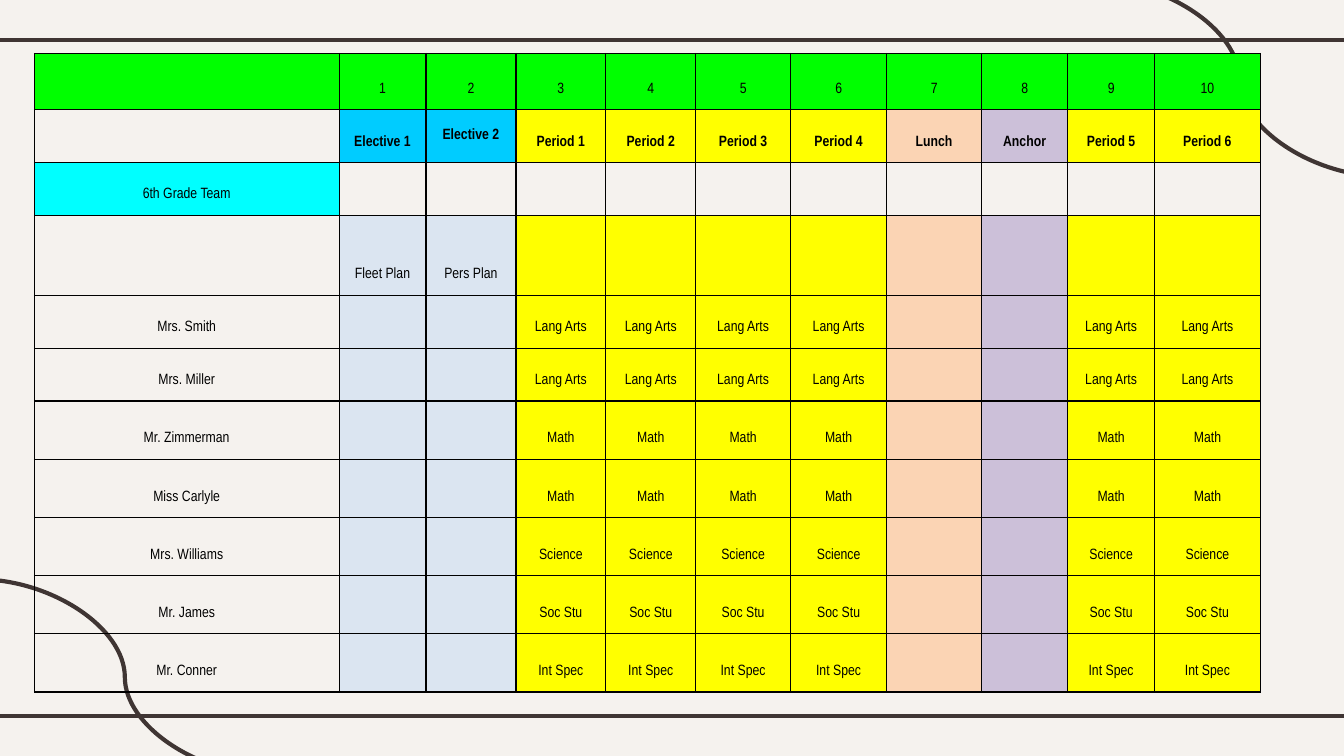
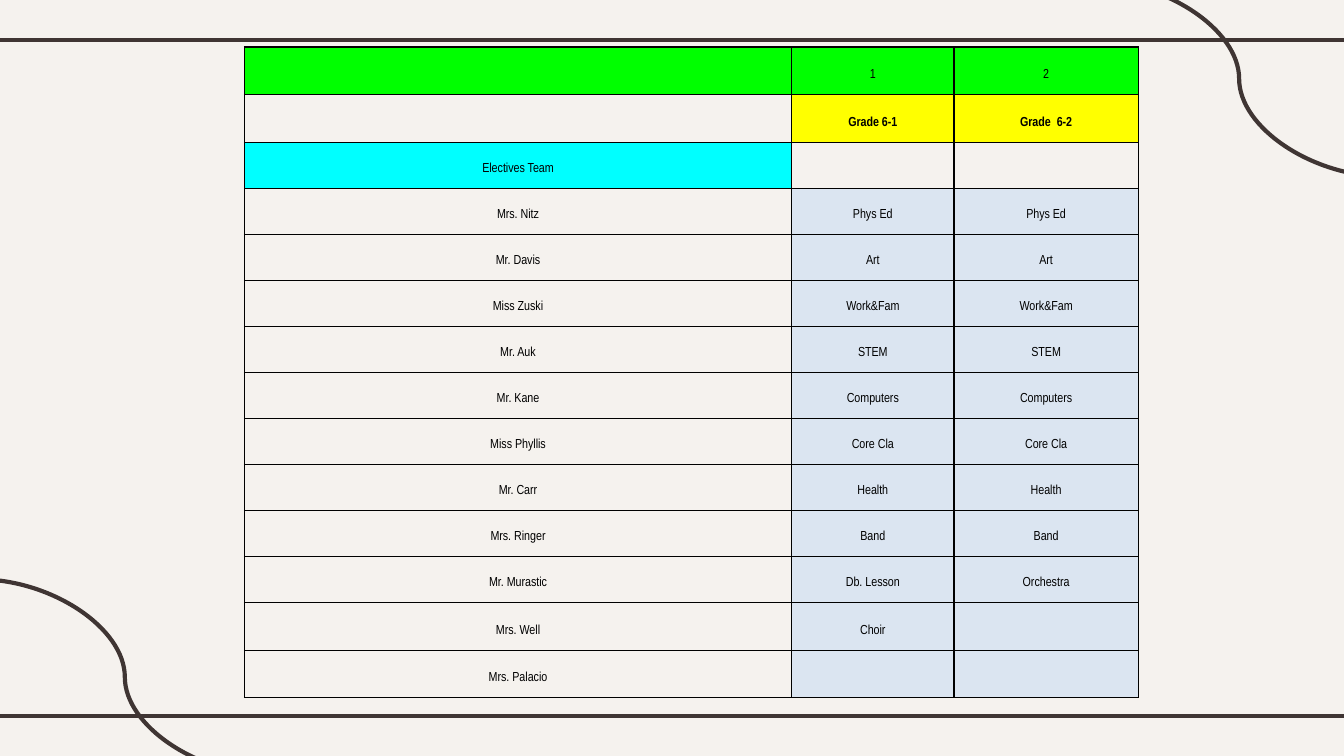
import lxml.etree
import pptx
import pptx.dml.color
import pptx.enum.shapes
import pptx.enum.text
import pptx.oxml.ns
import pptx.util

Cm = pptx.util.Cm
Pt = pptx.util.Pt
ANCHOR = pptx.enum.text.MSO_ANCHOR
CONNECTOR = pptx.enum.shapes.MSO_CONNECTOR

PAPER, INK, BLACK = "F5F2EE", "3F3533", "000000"
GREEN, AQUA, BLUE, YELLOW = "00FF00", "00FFFF", "00CCFF", "FFFF00"
PALE_BLUE, PEACH, LILAC = "DBE5F1", "FBD4B4", "CCC0D9"
FONT = "Arial Narrow"

FRAME = [
    (CONNECTOR.STRAIGHT, -0.2, 13.54, 25.6, 13.54),
    (CONNECTOR.STRAIGHT, -0.2, 0.76, 25.6, 0.76),
    (CONNECTOR.CURVE, 20.65, -0.36, 26.19, 3.34),
    (CONNECTOR.CURVE, -0.41, 10.95, 5.13, 14.65),
]

GRADE_TEAM = [
    ("Mrs. Smith", "Lang Arts"),
    ("Mrs. Miller", "Lang Arts"),
    ("Mr. Zimmerman", "Math"),
    ("Miss Carlyle", "Math"),
    ("Mrs. Williams", "Science"),
    ("Mr. James", "Soc Stu"),
    ("Mr. Conner", "Int Spec"),
]
ELECTIVES_TEAM = [
    ("Mrs. Nitz", "Phys Ed", "Phys Ed"),
    ("Mr. Davis", "Art", "Art"),
    ("Miss Zuski", "Work&Fam", "Work&Fam"),
    ("Mr. Auk", "STEM", "STEM"),
    ("Mr. Kane", "Computers", "Computers"),
    ("Miss Phyllis", "Core Cla", "Core Cla"),
    ("Mr. Carr", "Health", "Health"),
    ("Mrs. Ringer", "Band", "Band"),
    ("Mr. Murastic", "Db. Lesson", "Orchestra"),
    ("Mrs. Well", "Choir", ""),
    ("Mrs. Palacio", "", ""),
]

SCHEDULES = [
    {
        "left": 0.65, "top": 1.01, "size": 8,
        "widths": [5.76, 1.64, 1.7, 1.7, 1.7, 1.79, 1.82, 1.79, 1.63, 1.64, 2],
        "heights": [1.06, 1, 1, 1.51, 1, 1] + [1.1] * 5,
        "periods": ["Elective 1", "Elective 2", "Period 1", "Period 2", "Period 3",
                    "Period 4", "Lunch", "Anchor", "Period 5", "Period 6"],
        "period_fills": [BLUE] * 2 + [YELLOW] * 4 + [PEACH, LILAC] + [YELLOW] * 2,
        "body_fills": [PALE_BLUE] * 2 + [YELLOW] * 4 + [PEACH, LILAC] + [YELLOW] * 2,
        "team": "6th Grade Team",
        "body": [["", "Fleet Plan", "Pers Plan"] + [""] * 8]
        + [[teacher, "", ""] + [subject] * 4 + ["", ""] + [subject] * 2
           for teacher, subject in GRADE_TEAM],
        "centred": "Elective 2",
    },
    {
        "left": 4.62, "top": 0.89, "size": 7,
        "widths": [10.34, 3.07, 3.48],
        "heights": [0.9] * 2 + [0.87] * 10 + [0.9] * 2,
        "periods": ["Grade 6-1", "Grade  6-2"],
        "period_fills": [YELLOW] * 2,
        "body_fills": [PALE_BLUE] * 2,
        "team": "Electives Team",
        "body": ELECTIVES_TEAM,
        "centred": None,
    },
]

CELL_FORMAT = {
    "margin_left": Cm(0.08), "margin_right": Cm(0.08),
    "margin_top": Cm(0.25), "margin_bottom": Cm(0.25),
    "vertical_anchor": ANCHOR.BOTTOM,
}
LINE_SPACING = 1.15


def rgb(colour):
    return pptx.dml.color.RGBColor.from_string(colour)


def add_child(parent, tag, **attributes):
    return lxml.etree.SubElement(parent, pptx.oxml.ns.qn(tag), **attributes)


def apply(target, values):
    for name, value in values.items():
        setattr(target, name, value)


def add_frame(slide):
    for kind, *ends in FRAME:
        stroke = slide.shapes.add_connector(kind, *map(Cm, ends))
        stroke.line.color.rgb = rgb(INK)
        stroke.line.width = Pt(2.25)
        add_child(stroke._element.spPr, "a:effectLst")


def add_borders(cell):
    properties = cell._tc.get_or_add_tcPr()
    for side in ("a:lnL", "a:lnR", "a:lnT", "a:lnB"):
        border = add_child(properties, side, w=str(Pt(0.75)))
        add_child(add_child(border, "a:solidFill"), "a:srgbClr", val=BLACK)


def fill_cell(cell, text, fill, size, bold, centred):
    apply(cell, CELL_FORMAT)
    add_borders(cell)
    if fill:
        cell.fill.solid()
        cell.fill.fore_color.rgb = rgb(fill)
    else:
        cell.fill.background()
    paragraph = cell.text_frame.paragraphs[0]
    paragraph.alignment = pptx.enum.text.PP_ALIGN.CENTER
    if centred:
        cell.vertical_anchor = ANCHOR.MIDDLE
    else:
        paragraph.line_spacing = LINE_SPACING
    if text:
        run = paragraph.add_run()
        run.text = text
        apply(run.font, {"name": FONT, "size": Pt(size), "bold": bold})
        run.font.color.rgb = rgb(BLACK)
    else:
        add_child(paragraph._p, "a:endParaRPr", sz=str(size * 100))


def add_schedule(slide, schedule):
    periods, body = schedule["periods"], schedule["body"]
    count = len(periods)
    numbers = [str(number + 1) for number in range(count)]
    rows = [
        ([""] + numbers, [GREEN] * (count + 1)),
        ([""] + periods, [None] + schedule["period_fills"]),
        ([schedule["team"]] + [""] * count, [AQUA] + [None] * count),
    ] + [(texts, [None] + schedule["body_fills"]) for texts in body]

    widths, heights = schedule["widths"], schedule["heights"]
    table = slide.shapes.add_table(
        len(rows), len(widths), Cm(schedule["left"]), Cm(schedule["top"]),
        Cm(sum(widths)), Cm(sum(heights))).table
    apply(table, {"first_row": False, "horz_banding": False})
    for column, width in zip(table.columns, widths):
        column.width = Cm(width)
    for row, height, (texts, fills) in zip(table.rows, heights, rows):
        row.height = Cm(height)
        for cell, text, fill in zip(row.cells, texts, fills):
            fill_cell(cell, text, fill, schedule["size"], text in periods,
                      text == schedule["centred"])


def main():
    deck = pptx.Presentation()
    apply(deck, {"slide_width": Cm(25.4), "slide_height": Cm(14.29)})
    backdrop = deck.slide_master.background.fill
    backdrop.solid()
    backdrop.fore_color.rgb = rgb(PAPER)
    for schedule in SCHEDULES:
        slide = deck.slides.add_slide(deck.slide_layouts[6])
        add_frame(slide)
        add_schedule(slide, schedule)
    deck.save("out.pptx")


if __name__ == "__main__":
    main()
